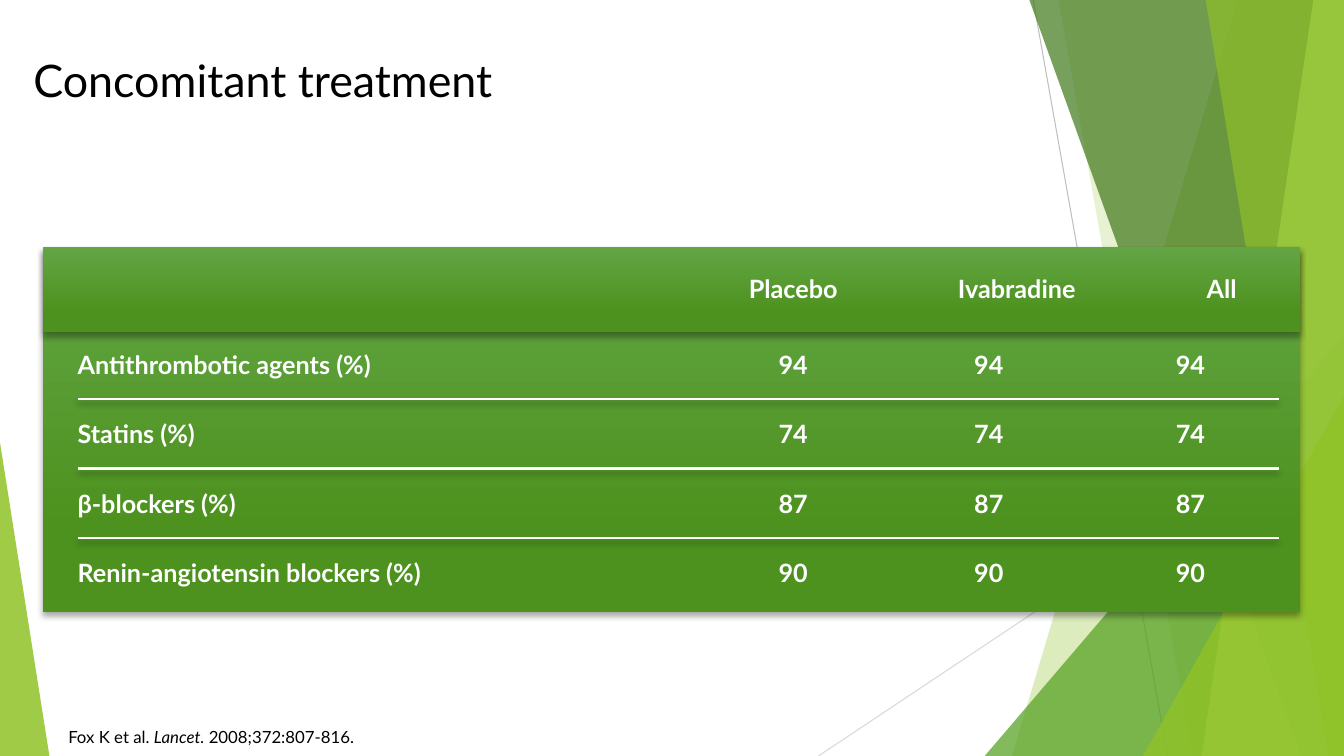
from dataclasses import dataclass

from lxml.etree import SubElement
from pptx import Presentation
from pptx.dml.color import RGBColor
from pptx.enum.shapes import MSO_CONNECTOR, MSO_SHAPE
from pptx.enum.text import MSO_ANCHOR, MSO_AUTO_SIZE, PP_ALIGN
from pptx.oxml import parse_xml
from pptx.oxml.ns import nsdecls, qn
from pptx.util import Pt

WIDTH, HEIGHT = 960, 540
NO_GRID_STYLE = "{2D5ABB26-0587-4C30-8999-92F81FD0307C}"


@dataclass(frozen=True)
class Theme:
    """Colours, font and type sizes of the slide."""

    font: str = "Lato"
    title_size: int = 32
    table_size: int = 18
    citation_size: int = 12
    ink: str = "000000"
    white: str = "FFFFFF"
    lime: str = "90C226"
    pale_lime: str = "C0E474"
    green: str = "54A021"
    dark_green: str = "3F7819"
    panel_top: str = "63A545"
    panel_bottom: str = "4D921E"
    gray: str = "BFBFBF"
    light_gray: str = "D9D9D9"


THEME = Theme()


def rgb(color):
    """Return the colour object for a hex string."""
    return RGBColor.from_string(color)


def style_run(run, size, color, bold=False, italic=False):
    """Format one run in the theme font."""
    font = run.font
    font.name, font.size = THEME.font, Pt(size)
    font.bold, font.italic = bold, italic
    font.color.rgb = rgb(color)


def shadow_effect():
    """Return a soft black shadow falling downwards."""
    return parse_xml(
        f'<a:effectLst {nsdecls("a")}>'
        f'<a:outerShdw blurRad="{Pt(4)}" dist="{Pt(3)}" dir="5400000" rotWithShape="0">'
        f'<a:srgbClr val="{THEME.ink}"><a:alpha val="35000"/></a:srgbClr>'
        "</a:outerShdw></a:effectLst>"
    )


def paint(shape, color, opacity):
    """Give a shape a translucent fill without line or shadow."""
    shape.shadow.inherit = False
    shape.line.fill.background()
    shape.fill.solid()
    shape.fill.fore_color.rgb = rgb(color)
    color_element = shape.fill._xPr.find(qn("a:solidFill"))[0]
    SubElement(color_element, qn("a:alpha"), val=str(opacity * 1000))


def add_facet(slide, top_x, bottom_x, color, opacity):
    """Draw a full-height facet ending at the right edge of the slide."""
    builder = slide.shapes.build_freeform(Pt(top_x), Pt(-0.6))
    corners = [(WIDTH, -0.6), (WIDTH, HEIGHT), (bottom_x, HEIGHT)]
    builder.add_line_segments([(Pt(x), Pt(y)) for x, y in corners], close=True)
    paint(builder.convert_to_shape(), color, opacity)


def add_corner(slide, left, top, width, apex, color, opacity):
    """Draw a triangle standing on the bottom edge of the slide."""
    shape = slide.shapes.add_shape(
        MSO_SHAPE.ISOSCELES_TRIANGLE, Pt(left), Pt(top), Pt(width), Pt(HEIGHT - top)
    )
    shape.adjustments[0] = apex
    paint(shape, color, opacity)


def add_line(slide, start, end, color):
    """Draw a thin straight line."""
    points = [Pt(value) for value in (*start, *end)]
    line = slide.shapes.add_connector(MSO_CONNECTOR.STRAIGHT, *points)
    line.line.color.rgb = rgb(color)
    line.line.width = Pt(0.75)
    SubElement(line._element.spPr, qn("a:effectLst"))


def add_scenery(slide):
    """Draw the green facets behind the content."""
    add_line(slide, (738, 0), (834, HEIGHT), THEME.gray)
    add_line(slide, (WIDTH, 290), (584.6, HEIGHT), THEME.light_gray)
    add_facet(slide, 884.2, 722.9, THEME.lime, 30)
    add_facet(slide, 756, 851.8, THEME.lime, 20)
    add_corner(slide, 703.4, 239.8, 256.6, 1, THEME.green, 72)
    add_facet(slide, 735.1, 929.5, THEME.dark_green, 70)
    add_facet(slide, 938.2, 858.2, THEME.pale_lime, 70)
    add_facet(slide, 861.1, 949, THEME.lime, 65)
    add_corner(slide, 816.5, 283, 143.5, 1, THEME.lime, 80)
    add_corner(slide, 0, 316.1, 35.3, 0, THEME.lime, 85)


def add_title(slide, text):
    """Fill and place the title placeholder."""
    title = slide.shapes.title
    title.left, title.top, title.width, title.height = Pt(16.6), Pt(33.8), Pt(925), Pt(36)
    frame = title.text_frame
    frame.text = text
    frame.auto_size = MSO_AUTO_SIZE.NONE
    frame.vertical_anchor = MSO_ANCHOR.TOP
    paragraph = frame.paragraphs[0]
    paragraph.alignment = PP_ALIGN.LEFT
    style_run(paragraph.runs[0], THEME.title_size, THEME.ink)


def add_panel(slide, height):
    """Draw a shaded green panel behind the table."""
    panel = slide.shapes.add_shape(
        MSO_SHAPE.RECTANGLE, Pt(31), Pt(176.4), Pt(897.8), Pt(height)
    )
    panel.line.fill.background()
    panel.fill.gradient()
    panel.fill.gradient_angle = 270
    stops = [(0, THEME.panel_top), (0.78, THEME.panel_bottom)]
    for stop, (position, color) in zip(panel.fill.gradient_stops, stops):
        stop.position, stop.color.rgb = position, rgb(color)
    panel._element.spPr.append(shadow_effect())


def add_rule(cell):
    """Draw a white rule under a table cell."""
    border = SubElement(cell._tc.get_or_add_tcPr(), qn("a:lnB"), w=str(Pt(2)))
    fill = SubElement(border, qn("a:solidFill"))
    SubElement(fill, qn("a:srgbClr"), val=THEME.white)


def fill_cell(cell, text, alignment, indent, ruled):
    """Write one table cell."""
    if ruled:
        add_rule(cell)
    cell.fill.background()
    cell.vertical_anchor = MSO_ANCHOR.MIDDLE
    cell.margin_left = Pt(indent)
    cell.margin_right = cell.margin_top = cell.margin_bottom = Pt(0)
    cell.text = text
    paragraph = cell.text_frame.paragraphs[0]
    paragraph.alignment = alignment
    for run in paragraph.runs:
        style_run(run, THEME.table_size, THEME.white, bold=True)


def add_treatment_table(slide, rows):
    """Lay the treatment table over its panels."""
    column_widths = [439.2, 144, 135.4, 139.7]
    header_indents, body_indents = [0, 0, 40, 57.6], [0, 0, 0, 13]
    row_heights = [59] + [49.7] * (len(rows) - 1)
    frame = slide.shapes.add_table(
        len(rows), len(column_widths), Pt(55.4), Pt(176.4),
        Pt(sum(column_widths)), Pt(sum(row_heights)),
    )
    table = frame.table
    table.first_row = table.horz_banding = False
    properties = table._tbl.tblPr
    properties.find(qn("a:tableStyleId")).text = NO_GRID_STYLE
    properties.insert(0, shadow_effect())
    for column, width in zip(table.columns, column_widths):
        column.width = Pt(width)
    for row_index, (row, height, values) in enumerate(zip(table.rows, row_heights, rows)):
        row.height = Pt(height)
        indents = body_indents if row_index else header_indents
        ruled = 0 < row_index < len(rows) - 1
        for column_index, (cell, value) in enumerate(zip(row.cells, values)):
            alignment = PP_ALIGN.CENTER if column_index else PP_ALIGN.LEFT
            fill_cell(cell, value, alignment, indents[column_index], ruled)


def add_citation(slide, parts):
    """Write the source line, with its journal in italics."""
    frame = slide.shapes.add_textbox(Pt(45.4), Pt(519.1), Pt(211), Pt(14.4)).text_frame
    frame.margin_left = frame.margin_right = frame.margin_top = frame.margin_bottom = Pt(0)
    frame.word_wrap = False
    paragraph = frame.paragraphs[0]
    paragraph.alignment = PP_ALIGN.CENTER
    for text, italic in parts:
        run = paragraph.add_run()
        run.text = text
        style_run(run, THEME.citation_size, THEME.ink, italic=italic)


def main():
    """Build and save the slide."""
    presentation = Presentation()
    presentation.slide_width, presentation.slide_height = Pt(WIDTH), Pt(HEIGHT)
    slide = presentation.slides.add_slide(presentation.slide_layouts[5])
    add_scenery(slide)
    add_title(slide, "Concomitant treatment")
    add_panel(slide, 260.6)
    add_panel(slide, 60.5)
    add_treatment_table(slide, [
        ("", "Placebo", "Ivabradine", "All"),
        ("Antithrombotic agents (%)", "94", "94", "94"),
        ("Statins (%)", "74", "74", "74"),
        ("β-blockers (%)", "87", "87", "87"),
        ("Renin-angiotensin blockers (%)", "90", "90", "90"),
    ])
    add_citation(slide, [
        ("Fox K et al. ", False), ("Lancet.", True), (" 2008;372:807-816.", False),
    ])
    presentation.save("out.pptx")


if __name__ == "__main__":
    main()
